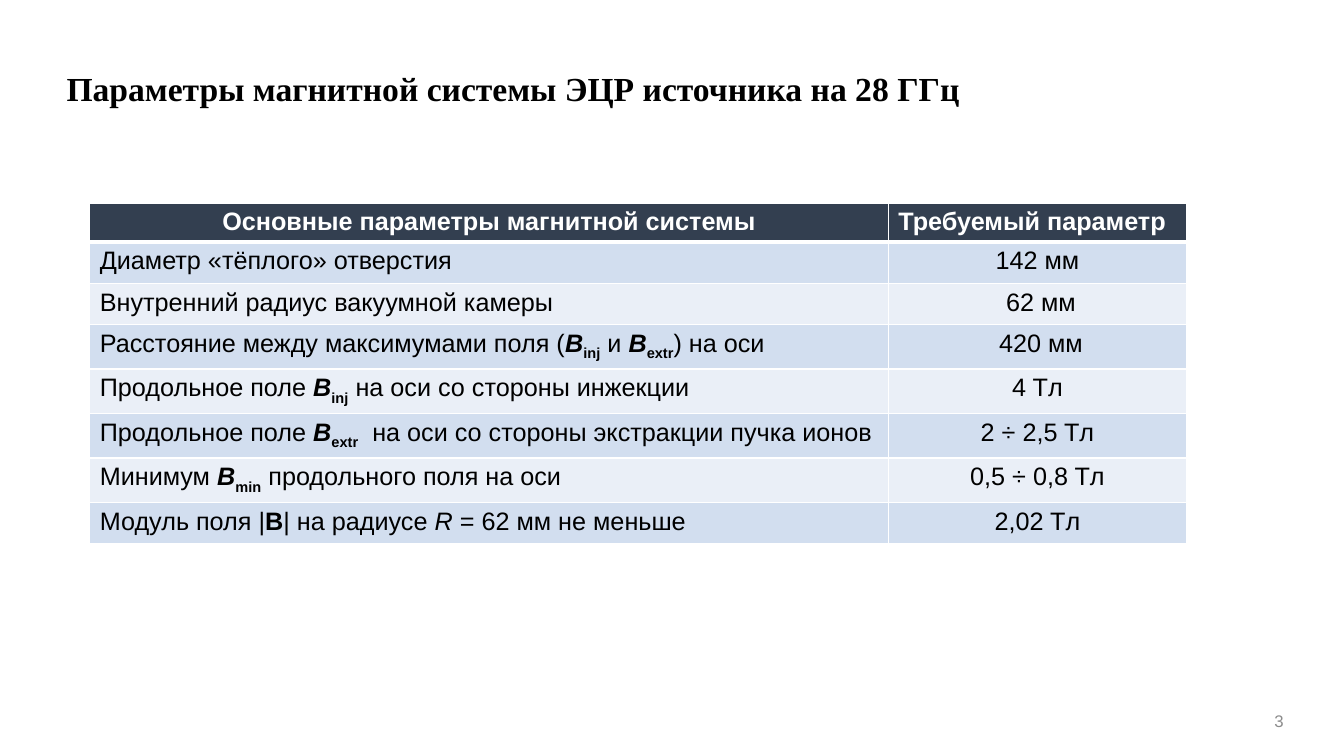
from lxml.etree import SubElement
from pptx import Presentation
from pptx.dml.color import RGBColor
from pptx.enum.text import MSO_ANCHOR, PP_ALIGN
from pptx.oxml.ns import qn
from pptx.util import Inches, Pt


def paint(font, color, form):
    font.color.rgb = RGBColor.from_string(color)
    for key, value in form.items():
        setattr(font, key, value)


def edge(cell, sides):
    props = cell._tc.get_or_add_tcPr()
    for side, width in sides.items():
        line = SubElement(props, qn(f"a:ln{side}"), w=str(Pt(width)))
        fill = SubElement(line, qn("a:solidFill"))
        SubElement(fill, qn("a:srgbClr"), val="FFFFFF")


deck = Presentation()
deck.slide_width, deck.slide_height = Inches(13.33), Inches(7.5)
slide = deck.slides.add_slide(deck.slide_layouts[5])

title = slide.shapes.title
title.left, title.top = Inches(0.56), Inches(0.4)
title.width, title.height = Inches(9.42), Inches(0.99)
title.text_frame.vertical_anchor = MSO_ANCHOR.MIDDLE
para = title.text_frame.paragraphs[0]
para.text = "Параметры магнитной системы ЭЦР источника на 28 ГГц"
para.alignment = PP_ALIGN.LEFT
para.line_spacing = 0.9
paint(para.runs[0].font, "000000", {"name": "Times New Roman", "size": Pt(24), "bold": True})

page = slide.shapes.add_textbox(Inches(9.83), Inches(6.95), Inches(3), Inches(0.4))
page.text_frame.word_wrap = True
page.text_frame.vertical_anchor = MSO_ANCHOR.MIDDLE
para = page.text_frame.paragraphs[0]
para.text = "3"
para.alignment = PP_ALIGN.RIGHT
paint(para.runs[0].font, "8C8C8C", {"name": "Arial", "size": Pt(12)})

forms = {
    "plain": {"bold": False},
    "bold": {"bold": True},
    "slant": {"bold": False, "italic": True},
    "field": {"bold": True, "italic": True},
    "sub": {"bold": True},
}
rows = [
    ([("Основные параметры магнитной системы", "bold")], [("Требуемый параметр", "bold")]),
    ([("Диаметр «тёплого» отверстия", "plain")], [("142 мм", "plain")]),
    ([("Внутренний радиус вакуумной камеры", "plain")], [(" 62 мм", "plain")]),
    ([("Расстояние между максимумами поля (", "plain"), ("B", "field"), ("inj", "sub"),
      (" и ", "plain"), ("B", "field"), ("extr", "sub"), (") на оси", "plain")],
     [(" 420 мм", "plain")]),
    ([("Продольное поле ", "plain"), ("B", "field"), ("inj", "sub"),
      (" на оси со стороны инжекции", "plain")], [("4 Tл", "plain")]),
    ([("Продольное поле ", "plain"), ("B", "field"), ("extr", "sub"),
      ("  на оси со стороны экстракции пучка ионов", "plain")], [("2 ÷ 2,5 Tл", "plain")]),
    ([("Минимум ", "plain"), ("B", "field"), ("min", "sub"),
      (" продольного поля на оси", "plain")], [("0,5 ÷ 0,8 Tл", "plain")]),
    ([("Модуль поля |", "plain"), ("B", "bold"), ("| на радиусе ", "plain"), ("R", "slant"),
      (" = 62 мм не меньше", "plain")], [("2,02 Tл", "plain")]),
]

table = slide.shapes.add_table(
    len(rows), 2, Inches(0.89), Inches(2.02), Inches(10.88), Inches(3.24)).table
for col, width in zip(table.columns, (7.92, 2.96)):
    col.width = Inches(width)

for r, row in enumerate(rows):
    head = r == 0
    table.rows[r].height = Inches(0.37 if head else 0.41)
    fill = "333F50" if head else ("EAEFF7", "D2DEEF")[r % 2]
    for c, parts in enumerate(row):
        cell = table.cell(r, c)
        cell.margin_top = cell.margin_bottom = Inches(0.04 if head else 0.05)
        edge(cell, {"L": 1, "R": 1, "T": 3 if r == 1 else 1, "B": 3 if head else 1})
        cell.fill.solid()
        cell.fill.fore_color.rgb = RGBColor.from_string(fill)
        para = cell.text_frame.paragraphs[0]
        para.alignment = PP_ALIGN.CENTER if head != (c == 1) else PP_ALIGN.LEFT
        for text, kind in parts:
            run = para.add_run()
            run.text = text
            paint(run.font, "FFFFFF" if head else "000000",
                  {"name": "Arial", "size": Pt(18), **forms[kind]})
            if kind == "sub":
                run._r.get_or_add_rPr().set("baseline", "-25000")

deck.save("out.pptx")
